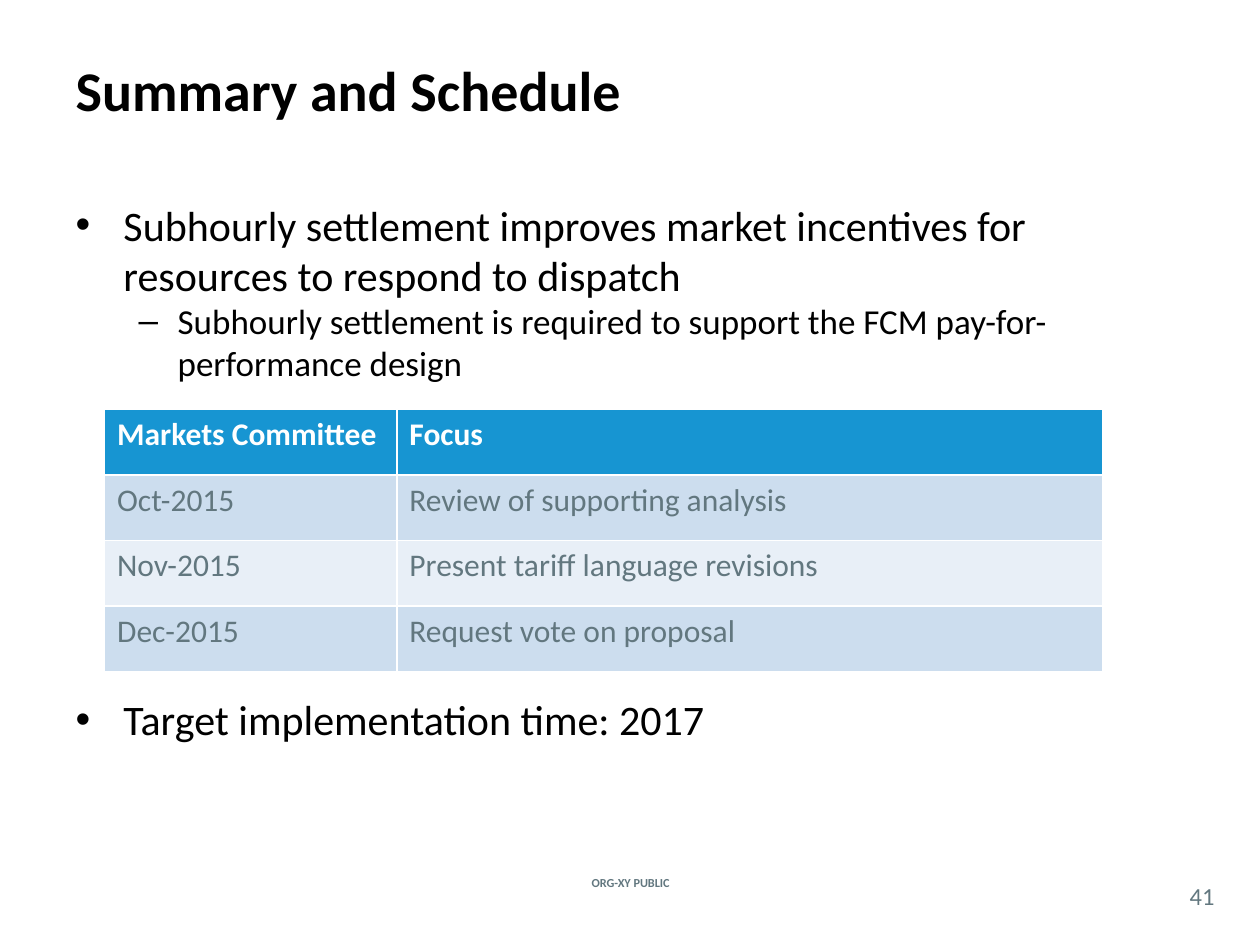
from lxml import etree
from pptx import Presentation
from pptx.dml.color import RGBColor
from pptx.enum import text
from pptx.oxml import ns
from pptx.util import Inches, Pt


def style(paragraph, size, color, bold=False):
    font = paragraph.font
    font.name, font.size, font.bold = "Calibri", Pt(size), bold
    font.color.rgb = RGBColor.from_string(color)


prs = Presentation()
prs.slide_width, prs.slide_height = Inches(10), Inches(7.5)
slide = prs.slides.add_slide(prs.slide_layouts[1])

title = slide.shapes.title
title.left, title.top, title.width, title.height = map(Inches, (0.5, 0.08, 9, 1.25))
title.text_frame.text = "Summary and Schedule"
title.text_frame.vertical_anchor = text.MSO_ANCHOR.MIDDLE
title.text_frame.auto_size = text.MSO_AUTO_SIZE.NONE
title.text_frame.paragraphs[0].alignment = text.PP_ALIGN.LEFT
style(title.text_frame.paragraphs[0], 32, "000000", True)

summary = slide.placeholders[1]
summary.left, summary.top, summary.width, summary.height = map(Inches, (0.5, 1.53, 9, 5.26))
summary.text_frame.auto_size = text.MSO_AUTO_SIZE.NONE
points = [
    ("Subhourly settlement improves market incentives for resources to respond to dispatch",
     0, 24, 0, "•", 0.38, -0.38),
    ("Subhourly settlement is required to support the FCM pay-for-performance design",
     1, 20, 0, "–", 0.81, -0.31),
    ("Target implementation time: 2017", 0, 24, 177, "•", 0.38, -0.38),
]
summary.text_frame.text = "\n".join(point[0] for point in points)
for paragraph, (_, level, size, before, bullet, margin, indent) in zip(
        summary.text_frame.paragraphs, points):
    paragraph.level = level
    paragraph.space_before = Pt(before)
    properties = paragraph._p.get_or_add_pPr()
    properties.set("marL", str(Inches(margin)))
    properties.set("indent", str(Inches(indent)))
    etree.SubElement(properties, ns.qn("a:buChar")).set("char", bullet)
    style(paragraph, size, "000000")

schedule_rows = [
    ("Markets Committee", "Focus"),
    ("Oct-2015", "Review of supporting analysis"),
    ("Nov-2015", "Present tariff language revisions"),
    ("Dec-2015", "Request vote on proposal"),
]
row_fills = ["1795D2", "CCDDEE", "E8EFF7", "CCDDEE"]
schedule = slide.shapes.add_table(
    4, 2, Inches(0.83), Inches(3.25), Inches(7.92), Inches(2.08)).table
for column, width in zip(schedule.columns, (2.32, 5.6)):
    column.width = Inches(width)
for r, (entries, fill) in enumerate(zip(schedule_rows, row_fills)):
    for c, entry in enumerate(entries):
        cell = schedule.cell(r, c)
        cell.text = entry
        cell.fill.solid()
        cell.fill.fore_color.rgb = RGBColor.from_string(fill)
        style(cell.text_frame.paragraphs[0], 18, "62777F" if r else "FFFFFF", r == 0)

footers = [
    ("ORG-XY PUBLIC", (4.27, 6.92, 1.47, 0.17), 7, True),
    ("41", (9.33, 6.96, 0.42, 0.29), 14, False),
]
for words, place, size, bold in footers:
    footer = slide.shapes.add_textbox(*map(Inches, place)).text_frame
    footer.text = words
    footer.word_wrap = True
    footer.vertical_anchor = text.MSO_ANCHOR.MIDDLE
    footer.margin_left = footer.margin_right = footer.margin_top = footer.margin_bottom = 0
    footer.paragraphs[0].alignment = text.PP_ALIGN.CENTER
    style(footer.paragraphs[0], size, "62777F", bold)

prs.save("out.pptx")
